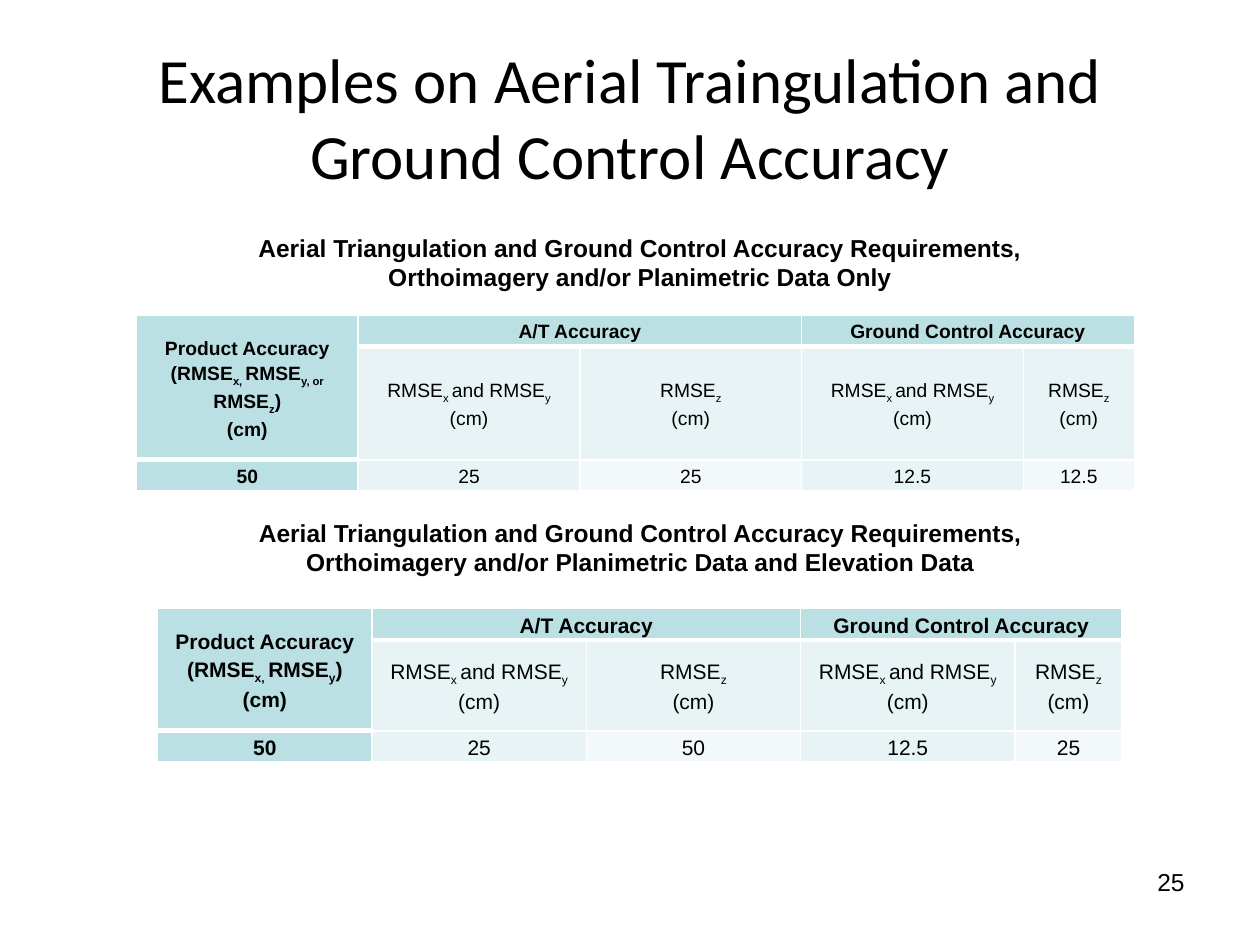
from lxml.etree import SubElement
from pptx import Presentation
from pptx.dml.color import RGBColor
from pptx.enum.text import MSO_ANCHOR, PP_ALIGN
from pptx.oxml.ns import qn
from pptx.util import Cm, Pt

BLACK = RGBColor(0x00, 0x00, 0x00)
WHITE = RGBColor(0xFF, 0xFF, 0xFF)
TEAL = RGBColor(0xBB, 0xE0, 0xE3)
LIGHT_TEAL = RGBColor(0xE7, 0xF3, 0xF4)
PALE_TEAL = RGBColor(0xF3, 0xF9, 0xFA)

# In cell texts, every second part between bars is a subscript
HORIZONTAL = ["RMSE|x |and RMSE|y", "(cm)"]
VERTICAL = ["RMSE|z", "(cm)"]
HEADING = "Aerial Triangulation and Ground Control Accuracy Requirements,"


def add_run(paragraph, text, size, font_name="Arial", bold=False):
    run = paragraph.add_run()
    run.text = text
    run.font.size = Pt(size)
    run.font.name = font_name
    run.font.bold = bold
    run.font.color.rgb = BLACK
    return run


def get_paragraph(frame, index):
    return frame.paragraphs[0] if index == 0 else frame.add_paragraph()


def add_text(slide, box, lines, size, align=PP_ALIGN.CENTER,
             anchor=MSO_ANCHOR.TOP, font_name="Arial", bold=False):
    shape = slide.shapes.add_textbox(*(Cm(length) for length in box))
    frame = shape.text_frame
    frame.word_wrap = True
    frame.vertical_anchor = anchor
    for index, line in enumerate(lines):
        paragraph = get_paragraph(frame, index)
        paragraph.alignment = align
        add_run(paragraph, line, size, font_name, bold)


def set_borders(cell, bottom_width):
    properties = cell._tc.get_or_add_tcPr()
    widths = {"a:lnL": 1, "a:lnR": 1, "a:lnT": 1, "a:lnB": bottom_width}
    for tag, width in widths.items():
        line = SubElement(properties, qn(tag), w=str(Pt(width)))
        fill = SubElement(line, qn("a:solidFill"))
        SubElement(fill, qn("a:srgbClr"), val=str(WHITE))


def format_cell(cell, color, bottom_width):
    set_borders(cell, bottom_width)
    cell.fill.solid()
    cell.fill.fore_color.rgb = color
    cell.vertical_anchor = MSO_ANCHOR.MIDDLE
    cell.margin_left = cell.margin_right = Cm(0.18)
    cell.margin_top = cell.margin_bottom = 0


def write_cell(cell, lines, size, bold):
    for index, line in enumerate(lines):
        paragraph = get_paragraph(cell.text_frame, index)
        paragraph.alignment = PP_ALIGN.CENTER
        paragraph.line_spacing = 1.15
        for part, text in enumerate(line.split("|")):
            if not text:
                continue
            run = add_run(paragraph, text, size, bold=bold)
            if part % 2:
                run._r.get_or_add_rPr().set("baseline", "-25000")


def cell_color(row, column):
    if row == 0 or column == 0:
        return TEAL
    return PALE_TEAL if row == 2 and column % 2 == 0 else LIGHT_TEAL


def add_accuracy_table(slide, left, top, column_width, size, product, values):
    row_heights = [0.63, 1.27, 0.63]
    column_widths = [column_width] * 4 + [column_width / 2]
    shape = slide.shapes.add_table(
        3, 5, Cm(left), Cm(top), Cm(sum(column_widths)), Cm(sum(row_heights)))
    table = shape.table
    for column, width in zip(table.columns, column_widths):
        column.width = Cm(width)
    for row, height in zip(table.rows, row_heights):
        row.height = Cm(height)

    # Product column spans both header rows; each group spans two columns
    table.cell(0, 0).merge(table.cell(1, 0))
    table.cell(0, 1).merge(table.cell(0, 2))
    table.cell(0, 3).merge(table.cell(0, 4))

    contents = [
        [product, ["A/T Accuracy"], [], ["Ground Control Accuracy"], []],
        [[], HORIZONTAL, VERTICAL, HORIZONTAL, VERTICAL],
        [[value] for value in values],
    ]
    for row, cells in enumerate(contents):
        for column, lines in enumerate(cells):
            cell = table.cell(row, column)
            header = row == 0 or (row == 1 and column == 0)
            format_cell(cell, cell_color(row, column), 3 if header else 1)
            write_cell(cell, lines, size, bold=row == 0 or column == 0)


def main():
    presentation = Presentation()
    presentation.slide_width = Cm(25.4)
    presentation.slide_height = Cm(19.05)
    slide = presentation.slides.add_slide(presentation.slide_layouts[6])

    # Title
    add_text(slide, (1.27, 0.76, 22.86, 3.18),
             ["Examples on Aerial Traingulation and Ground Control Accuracy"],
             36, anchor=MSO_ANCHOR.MIDDLE, font_name="Calibri")

    # Planimetric data only
    add_text(slide, (4.65, 4.57, 16.51, 1.45),
             [HEADING, "Orthoimagery and/or Planimetric Data Only"],
             14, bold=True)
    add_accuracy_table(
        slide, 2.75, 6.35, 4.47, 11,
        ["Product Accuracy (RMSE|x, |RMSE|y, or |RMSE|z|)", "(cm)"],
        ["50", "25", "25", "12.5", "12.5"])

    # Planimetric and elevation data
    add_text(slide, (4.24, 10.31, 17.35, 2.06),
             [HEADING, "Orthoimagery and/or Planimetric Data and Elevation Data"],
             14, bold=True)
    add_accuracy_table(
        slide, 3.18, 12.27, 4.32, 12,
        ["Product Accuracy (RMSE|x, |RMSE|y|)", "(cm)"],
        ["50", "25", "50", "12.5", "25"])

    # Page number
    add_text(slide, (18.21, 17.35, 5.92, 1.32), ["25"], 14,
             align=PP_ALIGN.RIGHT)

    presentation.save("out.pptx")


if __name__ == "__main__":
    main()
